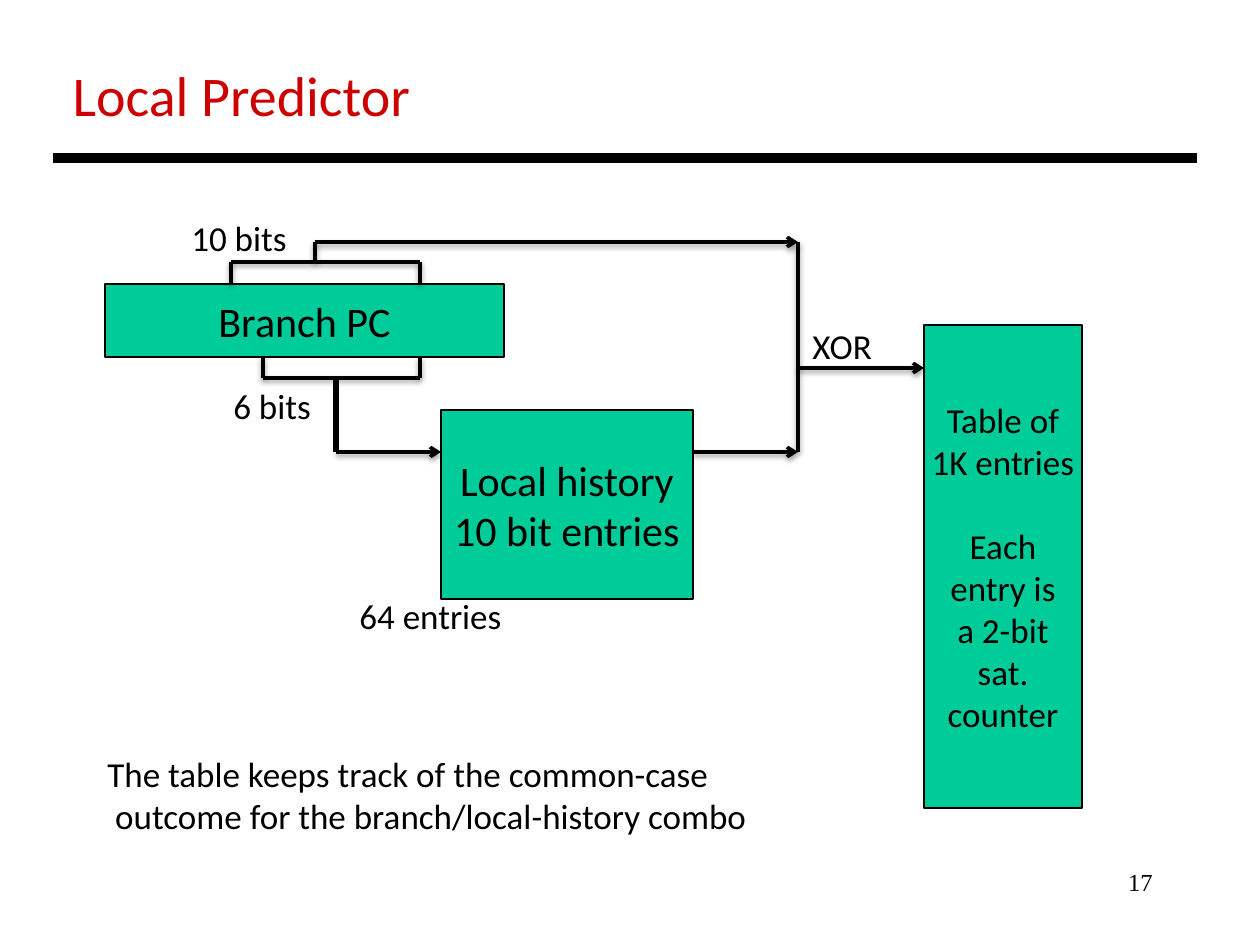
from lxml import etree
from pptx import Presentation
from pptx import util as u
from pptx.dml.color import RGBColor
from pptx.enum import shapes, text
from pptx.oxml import ns

PX = u.Inches(1) / 126
BLACK = RGBColor(0x00, 0x00, 0x00)
RED = RGBColor(0xCC, 0x00, 0x00)
GREEN = RGBColor(0x00, 0xCC, 0x99)

LABEL = dict(word_wrap=False, vertical_anchor=text.MSO_ANCHOR.TOP,
             auto_size=text.MSO_AUTO_SIZE.SHAPE_TO_FIT_TEXT)
BOXED = dict(word_wrap=False, vertical_anchor=text.MSO_ANCHOR.MIDDLE,
             auto_size=text.MSO_AUTO_SIZE.NONE)
NUMBER = dict(word_wrap=True, vertical_anchor=text.MSO_ANCHOR.TOP)
LEFT, CENTER, RIGHT = (text.PP_ALIGN.LEFT, text.PP_ALIGN.CENTER,
                       text.PP_ALIGN.RIGHT)


def px(*lengths):
    return [u.Emu(round(n * PX)) for n in lengths]


def set_attrs(obj, values):
    for name, value in values.items():
        setattr(obj, name, value)


def write(sp, lines, size, frame=LABEL, align=LEFT, color=BLACK,
          font="Calibri"):
    tf = sp.text_frame
    set_attrs(tf, frame)
    for i, line in enumerate(lines):
        p = tf.add_paragraph() if i else tf.paragraphs[0]
        p.alignment = align
        r = p.add_run()
        r.text = line
        set_attrs(r.font, dict(name=font, size=u.Pt(size)))
        r.font.color.rgb = color


def add_title(s, title, box):
    sp = s.shapes.title
    set_attrs(sp, dict(zip(("left", "top", "width", "height"), px(*box))))
    write(sp, [title], 32, color=RED)


def add_label(s, box, *lines, size=20, **style):
    write(s.shapes.add_textbox(*px(*box)), lines, size, **style)


def add_box(s, box, *lines, size=24):
    sp = s.shapes.add_shape(shapes.MSO_SHAPE.RECTANGLE, *px(*box))
    sp.shadow.inherit = False
    sp.fill.solid()
    sp.fill.fore_color.rgb = GREEN
    sp.line.color.rgb = BLACK
    sp.line.width = u.Pt(0.75)
    write(sp, lines, size, BOXED, CENTER)
    return sp


def add_line(s, x1, y1, x2, y2, width=2, arrow=False, shadow=True):
    c = s.shapes.add_connector(shapes.MSO_CONNECTOR.STRAIGHT,
                               *px(x1, y1, x2, y2))
    c.line.color.rgb = BLACK
    c.line.width = u.Pt(width)
    if arrow:
        etree.SubElement(c.line._get_or_add_ln(), ns.qn("a:tailEnd"),
                         type="arrow")
    effects = etree.SubElement(c._element.spPr, ns.qn("a:effectLst"))
    if shadow:
        outer = etree.SubElement(
            effects, ns.qn("a:outerShdw"), blurRad=str(u.Pt(3.1)),
            dist=str(u.Pt(1.6)), dir="5400000", rotWithShape="0")
        rgb = etree.SubElement(outer, ns.qn("a:srgbClr"), val=str(BLACK))
        etree.SubElement(rgb, ns.qn("a:alpha"), val="38000")


def add_bracket(s, left, right, edge, bar):
    """Mark a range of bits on one edge of the branch PC."""
    add_line(s, left, bar, right, bar)
    for x in (left, right):
        add_line(s, x, edge, x, bar)


def main():
    prs = Presentation()
    prs.slide_width, prs.slide_height = u.Inches(10), u.Inches(7.5)
    s = prs.slides.add_slide(prs.slide_layouts[5])

    # Heading and page number
    add_title(s, "Local Predictor", (60, 54, 367, 81))
    add_line(s, 53, 158, 1197, 158, width=6, shadow=False)
    add_label(s, (903, 861, 262, 63), "17", size=14, frame=NUMBER,
              align=RIGHT, font="Times New Roman")

    # Predictor stages
    add_box(s, (105, 284, 399, 73), "Branch PC")
    add_box(s, (441, 410, 252, 189), "Local history", "10 bit entries")
    table = add_box(s, (924, 325, 158, 483), "Table of", "1K entries", "Each",
                    "entry is", "a 2-bit", "sat.", "counter", size=20)
    table.text_frame.paragraphs[2].space_before = u.Pt(24)

    # Bit ranges taken from the branch PC
    add_bracket(s, 231, 420, 284, 262)
    add_bracket(s, 263, 420, 357, 378)

    # Ten bits go to the XOR, six bits index the local history
    add_line(s, 315, 262, 315, 242)
    add_line(s, 315, 242, 798, 242, arrow=True)
    add_line(s, 336, 378, 336, 452, width=3, shadow=False)
    add_line(s, 336, 452, 441, 452, arrow=True)
    add_line(s, 693, 452, 798, 452, arrow=True)

    # XOR result selects the counter
    add_line(s, 798, 242, 798, 452)
    add_line(s, 798, 368, 924, 368, arrow=True)

    # Labels and remark
    add_label(s, (179, 210, 122, 55), "10 bits")
    add_label(s, (221, 378, 103, 55), "6 bits")
    add_label(s, (347, 588, 169, 55), "64 entries")
    add_label(s, (800, 318, 86, 55), "XOR")
    add_label(s, (95, 746, 670, 97),
              "The table keeps track of the common-case",
              " outcome for the branch/local-history combo")

    prs.save("out.pptx")


if __name__ == "__main__":
    main()
